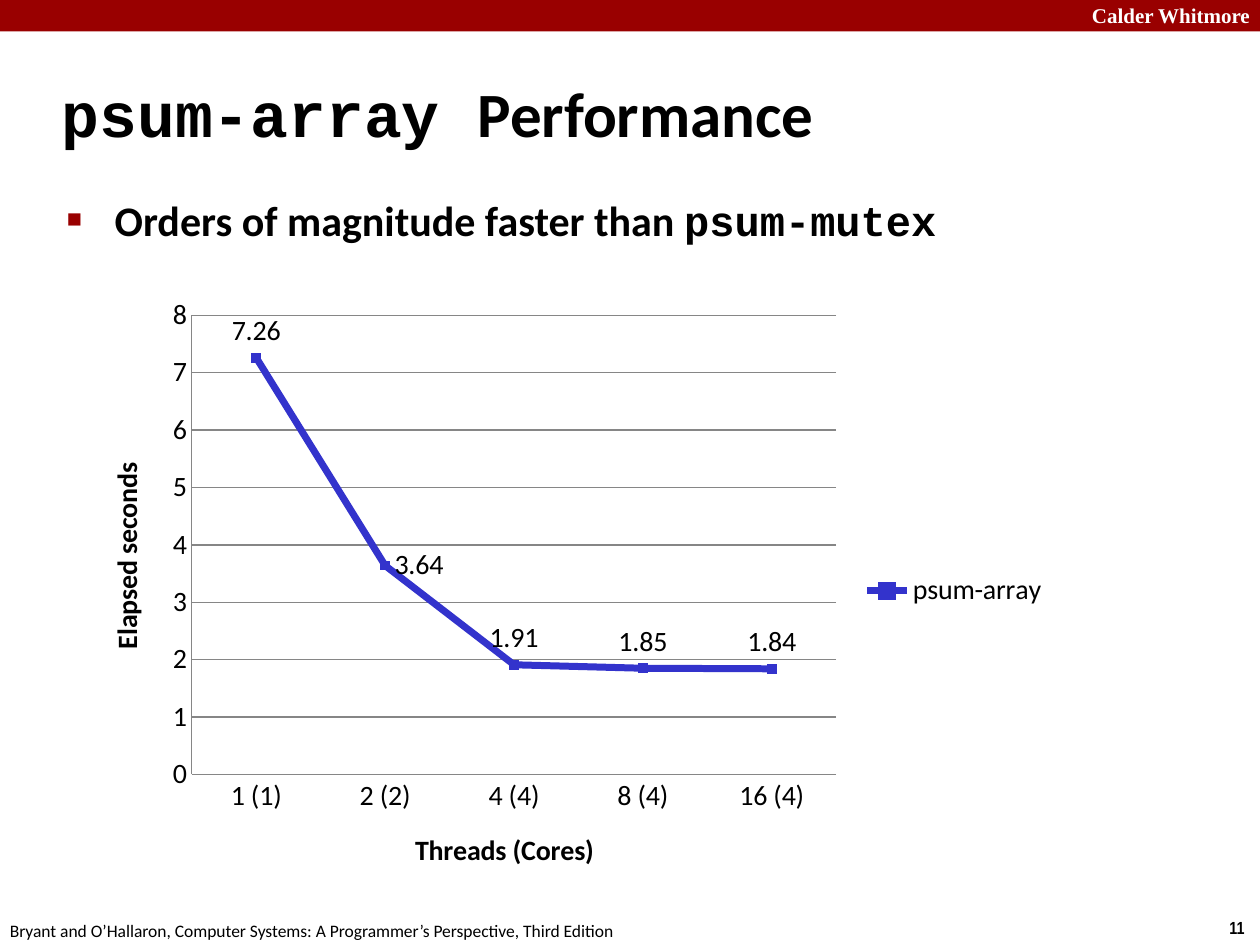
from lxml.etree import SubElement, fromstring
from pptx import Presentation
from pptx.chart.data import CategoryChartData
from pptx.dml.color import RGBColor
from pptx.enum.chart import (XL_CHART_TYPE, XL_LABEL_POSITION, XL_LEGEND_POSITION,
                             XL_MARKER_STYLE, XL_TICK_MARK)
from pptx.enum.shapes import MSO_SHAPE
from pptx.enum.text import MSO_ANCHOR, MSO_AUTO_SIZE, PP_ALIGN
from pptx.oxml.ns import nsdecls, qn
from pptx.util import Inches, Pt


class Theme:
    red = RGBColor(0x99, 0x00, 0x00)
    blue = RGBColor(0x33, 0x33, 0xCC)
    grey = RGBColor(0x86, 0x86, 0x86)
    black = RGBColor(0, 0, 0)
    white = RGBColor(255, 255, 255)
    sans, mono, serif, thin = "Calibri", "Courier New", "Times New Roman", "Arial Narrow"
    title, body, chart, brand, foot = Pt(36), Pt(24), Pt(16), Pt(12), Pt(10)


def style(font, size, name=Theme.sans, bold=False, color=Theme.black):
    for key, val in {"size": size, "name": name, "bold": bold}.items():
        setattr(font, key, val)
    font.color.rgb = color


def place(shape, left, top, width, height):
    for key, val in {"left": left, "top": top, "width": width, "height": height}.items():
        setattr(shape, key, Inches(val))


deck = Presentation()
deck.slide_width, deck.slide_height = Inches(10), Inches(7.5)
slide = deck.slides.add_slide(deck.slide_layouts[1])
shapes = slide.shapes

# Top band
band = shapes.add_shape(MSO_SHAPE.RECTANGLE, 0, 0, Inches(10), Inches(0.25))
band.shadow.inherit = False
band.fill.solid()
band.fill.fore_color.rgb = Theme.red
band.line.fill.background()

# Band name, page number and footer
notes = [
    ("Calder Whitmore", (8.02, -0.03, 2, 0.3), PP_ALIGN.RIGHT,
     (Theme.brand, Theme.serif, True, Theme.white)),
    ("11", (9.66, 7.23, 0.34, 0.27), PP_ALIGN.LEFT, (Theme.foot, Theme.thin, True)),
    ("Bryant and O’Hallaron, Computer Systems: A Programmer’s Perspective, Third Edition",
     (-0.02, 7.25, 5.08, 0.27), PP_ALIGN.LEFT, (Theme.foot,)),
]
for text, box, align, look in notes:
    note = shapes.add_textbox(*map(Inches, box))
    note.text_frame.word_wrap = False
    para = note.text_frame.paragraphs[0]
    para.alignment = align
    run = para.add_run()
    run.text = text
    style(run.font, *look)

# Title and list
title, body = shapes.title, slide.placeholders[1]
place(title, 0.39, 0.48, 8.3, 0.83)
place(body, 0.43, 1.49, 8.64, 0.84)
parts = [
    (title, MSO_ANCHOR.MIDDLE, 0.13, Theme.title,
     [("psum-array ", Theme.mono), ("Performance", Theme.sans)]),
    (body, MSO_ANCHOR.TOP, 0.38, Theme.body,
     [("Orders of magnitude faster than ", Theme.sans), ("psum-mutex", Theme.mono)]),
]
for holder, anchor, indent, size, runs in parts:
    frame = holder.text_frame
    frame.auto_size = MSO_AUTO_SIZE.NONE
    frame.vertical_anchor = anchor
    para = frame.paragraphs[0]
    para.alignment = PP_ALIGN.LEFT
    props = para._p.get_or_add_pPr()
    props.set("marL", str(Inches(indent)))
    props.set("indent", str(-Inches(indent)))
    for text, name in runs:
        run = para.add_run()
        run.text = text
        style(run.font, size, name, True)

# Square bullet
para = body.text_frame.paragraphs[0]
para.space_before = Pt(4.8)
props = para._p.get_or_add_pPr()
tint = SubElement(props, qn("a:buClr"))
SubElement(tint, qn("a:srgbClr")).set("val", str(Theme.red))
SubElement(props, qn("a:buSzPct")).set("val", "60000")
SubElement(props, qn("a:buChar")).set("char", "■")

# Line chart
data = CategoryChartData()
data.categories = ["1 (1)", "2 (2)", "4 (4)", "8 (4)", "16 (4)"]
data.add_series("psum-array", [7.26, 3.64, 1.91, 1.85, 1.84])
box = map(Inches, (0.67, 2.26, 7.75, 4.86))
chart = shapes.add_chart(XL_CHART_TYPE.LINE_MARKERS, *box, data).chart
chart.has_title = False
style(chart.font, Theme.chart)
chart.has_legend = True
chart.legend.position = XL_LEGEND_POSITION.RIGHT
chart.legend.include_in_layout = False
style(chart.legend.font, Theme.chart)

# Axes
for axis, text in ((chart.category_axis, "Threads (Cores)"),
                   (chart.value_axis, "Elapsed seconds")):
    axis.major_tick_mark = axis.minor_tick_mark = XL_TICK_MARK.NONE
    axis.format.line.color.rgb = Theme.grey
    style(axis.tick_labels.font, Theme.chart)
    run = axis.axis_title.text_frame.paragraphs[0].add_run()
    run.text = text
    style(run.font, Theme.chart, bold=True)
scale = chart.value_axis
for key, val in {"minimum_scale": 0, "maximum_scale": 8, "major_unit": 1}.items():
    setattr(scale, key, val)
scale.major_gridlines.format.line.color.rgb = Theme.grey

# Series and labels
plot = chart.plots[0]
plot.vary_by_categories = False
line = plot.series[0]
line.smooth = False
line.format.line.color.rgb = Theme.blue
line.format.line.width = Pt(4)
mark = line.marker
mark.style, mark.size = XL_MARKER_STYLE.SQUARE, 5
mark.format.fill.solid()
mark.format.fill.fore_color.rgb = Theme.blue
mark.format.line.color.rgb = Theme.blue
labels = line.data_labels
labels.show_value = True
side = line.points[1].data_label
for label, spot in ((labels, XL_LABEL_POSITION.ABOVE), (side, XL_LABEL_POSITION.RIGHT)):
    style(label.font, Theme.chart)
    label.position = spot

# Fixed plot area, as shares of the chart
area = chart._chartSpace.chart.plotArea
for old in area.findall(qn("c:layout")):
    area.remove(old)
shares = "".join(f'<c:{key} val="{val}"/>' for key, val in
                 {"x": 0.11, "y": 0.05, "w": 0.66, "h": 0.75}.items())
area.insert(0, fromstring(
    f'<c:layout {nsdecls("c")}><c:manualLayout><c:layoutTarget val="inner"/>'
    f'<c:xMode val="edge"/><c:yMode val="edge"/>{shares}</c:manualLayout></c:layout>'))

deck.save("out.pptx")
